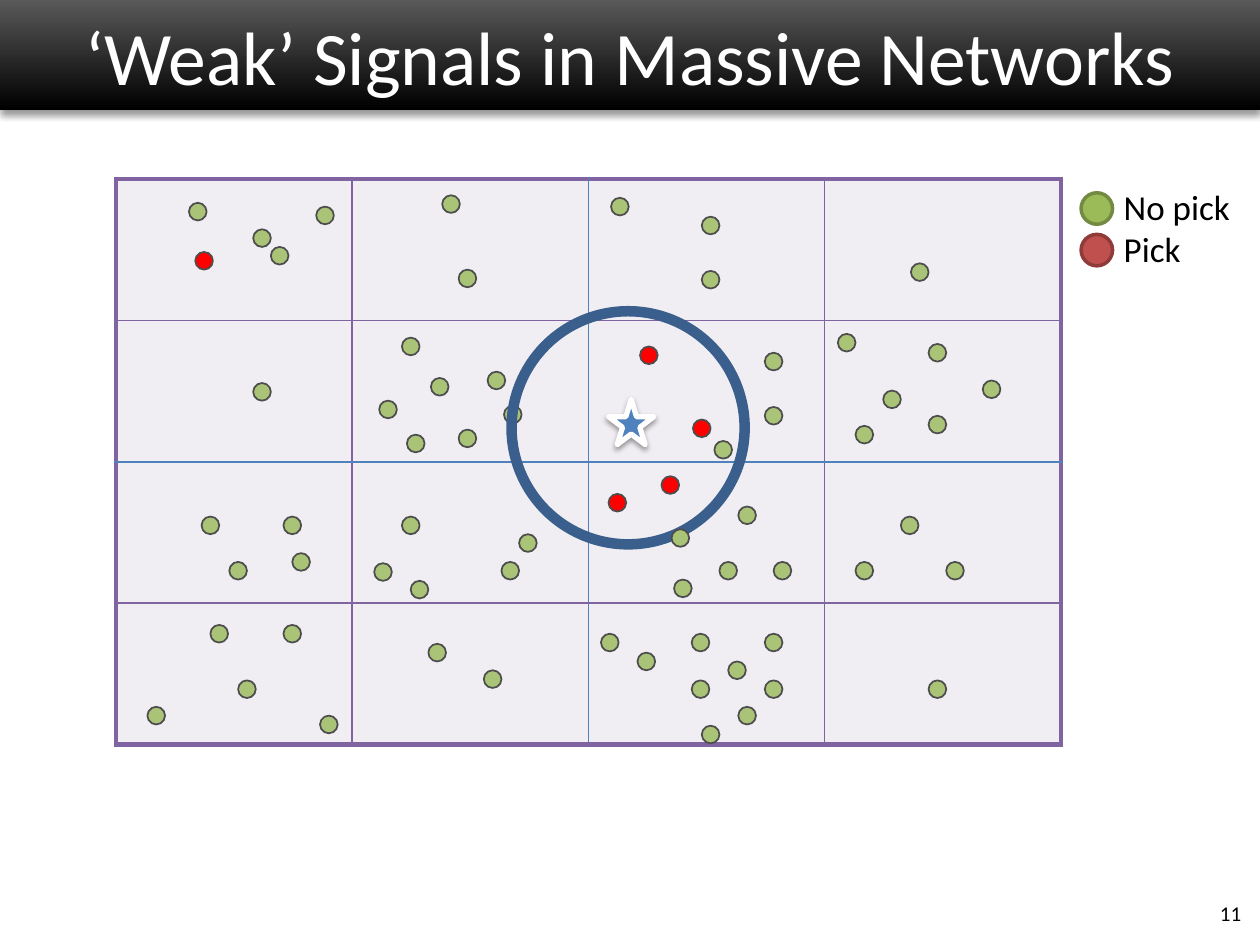
from lxml.etree import SubElement
from pptx import Presentation
from pptx.dml.color import RGBColor
from pptx.enum.shapes import MSO_SHAPE
from pptx.enum.text import MSO_ANCHOR, MSO_AUTO_SIZE, PP_ALIGN
from pptx.oxml.ns import qn
from pptx.util import Pt

EMU_PER_PX = 9144
PURPLE, BLUE = "8064A2", "4F81BD"
GREEN_DOT, RED_DOT = "AAC477", "FF0000"

QUIET_SENSORS = [
    (150, 161), (251, 164), (201, 182), (215, 196), (351, 155), (364, 214),
    (485, 157), (557, 172), (557, 215), (723, 209),
    (201, 304), (319, 268), (342, 300), (387, 295), (301, 318), (400, 322),
    (364, 341), (323, 345), (607, 280), (665, 265), (737, 273), (780, 302),
    (701, 310), (737, 330), (679, 338),
    (160, 410), (225, 410), (182, 446), (232, 439), (319, 410), (297, 447),
    (326, 461), (398, 446), (412, 424), (586, 402), (571, 446), (535, 460),
    (614, 446), (715, 410), (679, 446), (751, 446),
    (167, 496), (225, 496), (189, 540), (117, 561), (254, 568), (340, 511),
    (384, 532), (477, 503), (506, 518), (549, 503), (607, 503), (578, 525),
    (549, 540), (607, 540), (586, 561), (557, 576), (737, 540),
]
QUIET_NEAR_EVENT = [(607, 323), (567, 350), (533, 420)]
PICKS_NEAR_EVENT = [(550, 333), (508, 275), (483, 392), (525, 378)]


def px(length):
    """Turn whole px into EMU."""
    return length * EMU_PER_PX


def color(value):
    """Turn a hex string into a colour."""
    return RGBColor.from_string(value)


class SlideBuilder:
    """Holds the style and the current slide."""

    font = "Calibri"

    def __init__(self, page):
        """Keep the page to draw on."""
        self.page = page

    def shape(self, kind, left, top, width, height, fill=None, line=None, weight=1):
        """Add a preset shape without a shadow."""
        shape = self.page.shapes.add_shape(kind, px(left), px(top), px(width), px(height))
        shape.shadow.inherit = False
        if fill:
            shape.fill.solid()
            shape.fill.fore_color.rgb = color(fill)
        else:
            shape.fill.background()
        if line:
            shape.line.color.rgb = color(line)
            shape.line.width = Pt(weight)
        else:
            shape.line.fill.background()
        return shape

    def shadow(self, shape, opacity, blur, distance):
        """Add a downward black shadow."""
        effects = shape._element.spPr.find(qn("a:effectLst"))
        outer = SubElement(effects, qn("a:outerShdw"), blurRad=str(Pt(blur)),
                           dist=str(Pt(distance)), dir="5400000", rotWithShape="0")
        black = SubElement(outer, qn("a:srgbClr"), val="000000")
        SubElement(black, qn("a:alpha"), val=str(opacity * 1000))

    def gradient(self, shape, top, bottom):
        """Fill a shape from top to bottom."""
        shape.fill.gradient()
        shape.fill.gradient_angle = 270
        for stop, value in zip(shape.fill.gradient_stops, (top, bottom)):
            stop.color.rgb = color(value)

    def label(self, shape, lines, size, align, value="000000", anchor=MSO_ANCHOR.MIDDLE):
        """Set one paragraph for each line."""
        frame = shape.text_frame
        frame.word_wrap = True
        frame.vertical_anchor = anchor
        for index, line in enumerate(lines):
            para = frame.add_paragraph() if index else frame.paragraphs[0]
            para.alignment = align
            span = para.add_run()
            span.text = line
            span.font.name = self.font
            span.font.size = Pt(size)
            span.font.color.rgb = color(value)

    def text(self, left, top, width, height, lines, size):
        """Add a text box that grows with its text."""
        box = self.page.shapes.add_textbox(px(left), px(top), px(width), px(height))
        self.label(box, lines, size, PP_ALIGN.LEFT, anchor=MSO_ANCHOR.TOP)
        box.text_frame.auto_size = MSO_AUTO_SIZE.SHAPE_TO_FIT_TEXT

    def border(self, cell, side, edge, count):
        """Draw a cell border by the place of its grid line."""
        weight = 3 if edge in (0, count) else 1
        line = SubElement(cell._tc.get_or_add_tcPr(), qn("a:ln" + side), w=str(Pt(weight)))
        fill = SubElement(line, qn("a:solidFill"))
        SubElement(fill, qn("a:srgbClr"), val=BLUE if edge == count // 2 else PURPLE)

    def grid(self, left, top, width, height, count, fill):
        """Add a square-count table of empty cells."""
        table = self.page.shapes.add_table(
            count, count, px(left), px(top), px(width), px(height)).table
        for row in range(count):
            for column in range(count):
                cell = table.cell(row, column)
                edges = {"L": column, "R": column + 1, "T": row, "B": row + 1}
                for side, edge in edges.items():
                    self.border(cell, side, edge, count)
                cell.fill.solid()
                cell.fill.fore_color.rgb = color(fill)

    def dots(self, places, fill):
        """Add one sensor dot at each place."""
        for left, top in places:
            self.shape(MSO_SHAPE.OVAL, left, top, 14, 14, fill, "4D4D4D")


def main():
    """Build and save the deck."""
    deck = Presentation()
    deck.slide_width, deck.slide_height = px(1000), px(750)
    slide = SlideBuilder(deck.slides.add_slide(deck.slide_layouts[6]))

    number = slide.shape(MSO_SHAPE.RECTANGLE, 762, 705, 233, 40, line="FFFFFF", weight=0.75)
    slide.label(number, ["11"], 12, PP_ALIGN.RIGHT)
    title = slide.shape(MSO_SHAPE.RECTANGLE, 0, 0, 1000, 87)
    slide.gradient(title, "595959", "000000")
    slide.shadow(title, 40, 4, 3)
    slide.label(title, ["‘Weak’ Signals in Massive Networks"], 43.2, PP_ALIGN.CENTER, "FFFFFF")

    slide.grid(92, 142, 750, 449, 4, "F1EEF3")
    slide.dots(QUIET_SENSORS, GREEN_DOT)
    slide.dots([(155, 200)], RED_DOT)
    event = slide.shape(MSO_SHAPE.STAR_5_POINT, 483, 317, 36, 36, BLUE, "FFFFFF", 3)
    slide.shadow(event, 38, 3.1, 1.6)
    slide.shape(MSO_SHAPE.OVAL, 406, 247, 185, 185, line="3A5F8C", weight=6)
    slide.dots(QUIET_NEAR_EVENT, GREEN_DOT)
    slide.dots(PICKS_NEAR_EVENT, RED_DOT)

    slide.text(882, 142, 126, 77, ["No pick", "Pick"], 20)
    for top, fill, line in ((153, "9BBB59", "738A42"), (186, "C0504D", "8E3B39")):
        slide.shape(MSO_SHAPE.OVAL, 858, top, 25, 25, fill, line, 2)
    deck.save("out.pptx")


if __name__ == "__main__":
    main()
